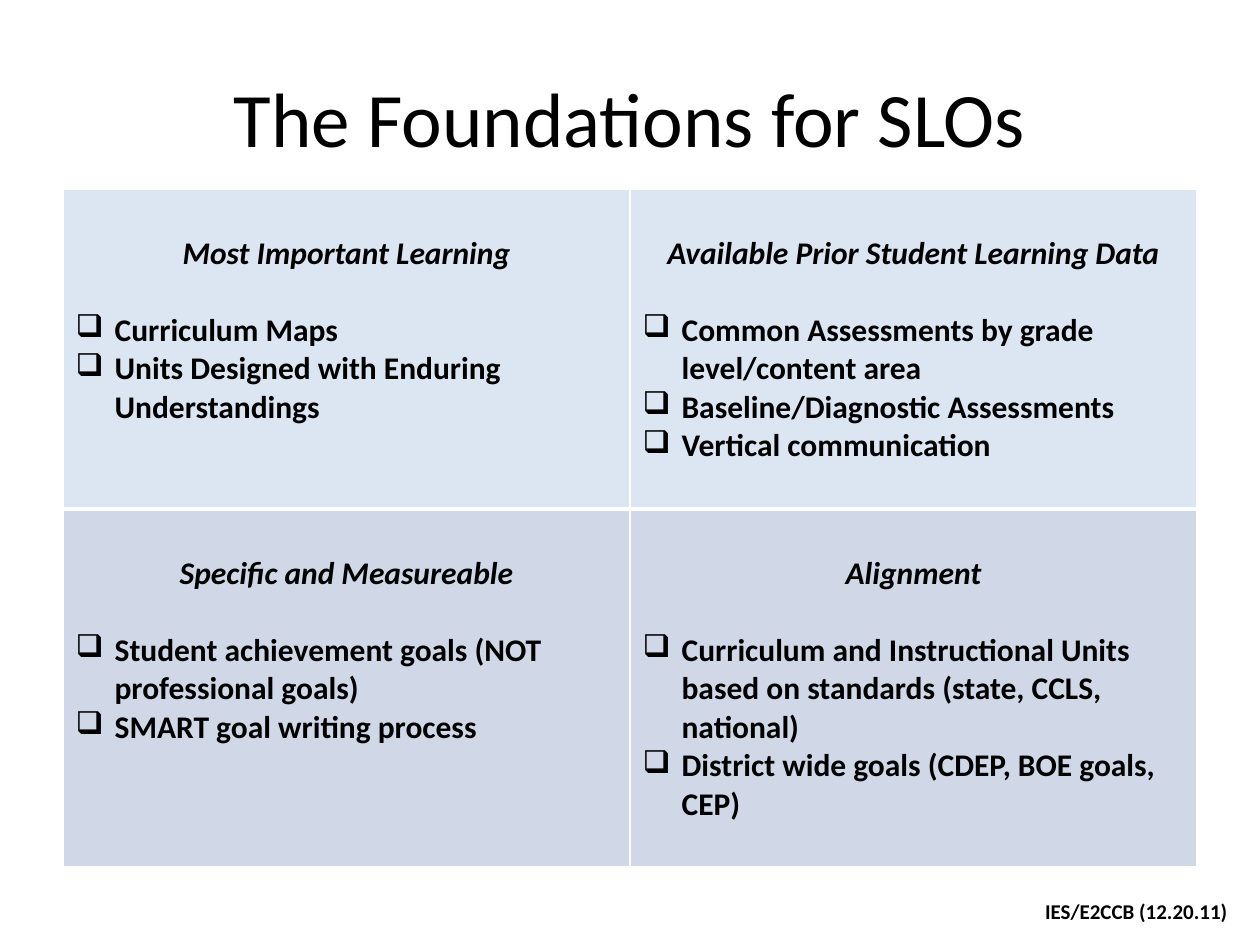
"""Build the slide on the foundations for SLOs."""
from dataclasses import dataclass

from lxml.etree import SubElement as Sub
from pptx import Presentation
from pptx.dml.color import RGBColor
from pptx.enum.text import MSO_ANCHOR as Anchor, PP_ALIGN as Align
from pptx.oxml.ns import qn
from pptx.util import Inches, Pt

BLACK = RGBColor(0x00, 0x00, 0x00)
WHITE = RGBColor(0xFF, 0xFF, 0xFF)
PALE = RGBColor(0xDC, 0xE6, 0xF2)
BLUE = RGBColor(0xD0, 0xD8, 0xE8)
FACE = "Calibri"
THIN, THICK = 1, 3


@dataclass
class Panel:
    head: str
    items: list[str]


@dataclass
class Band:
    high: float
    fill: RGBColor
    top: int
    base: int
    panels: list[Panel]


BANDS = [
    Band(2.54, PALE, THIN, THICK, [
        Panel("Most Important Learning", [
            "Curriculum Maps",
            "Units Designed with Enduring Understandings",
        ]),
        Panel("Available Prior Student Learning Data", [
            "Common Assessments by grade level/content area",
            "Baseline/Diagnostic Assessments",
            "Vertical communication",
        ]),
    ]),
    Band(2.84, BLUE, THICK, THIN, [
        Panel("Specific and Measureable", [
            "Student achievement goals (NOT professional goals)",
            "SMART goal writing process",
        ]),
        Panel("Alignment", [
            "Curriculum and Instructional Units based on standards "
            "(state, CCLS, national)",
            "District wide goals (CDEP, BOE goals, CEP)",
        ]),
    ]),
]


def style(para, size: int, align: Align, bold: bool = True,
          slant: bool = False) -> None:
    """Set the alignment and font of a paragraph."""
    para.alignment = align
    font = para.font
    font.name, font.size = FACE, Pt(size)
    font.bold, font.italic = bold, slant
    font.color.rgb = BLACK


def bullet(para) -> None:
    """Give a paragraph a box bullet and a hanging indent."""
    props = para._p.get_or_add_pPr()
    props.set("marL", str(Inches(0.31)))
    props.set("indent", str(-Inches(0.31)))
    Sub(props, qn("a:buChar"), char="❑")


def border(cell, top: int, base: int) -> None:
    """Draw white borders around a cell."""
    props = cell._tc.get_or_add_tcPr()
    for side, width in zip("LRTB", (THIN, THIN, top, base)):
        line = Sub(props, qn(f"a:ln{side}"), w=str(Pt(width)))
        Sub(Sub(line, qn("a:solidFill")), qn("a:srgbClr"), val=str(WHITE))


def draw(cell, panel: Panel, band: Band) -> None:
    """Fill one cell with its heading and list."""
    border(cell, band.top, band.base)
    cell.fill.solid()
    cell.fill.fore_color.rgb = band.fill
    cell.margin_top = Inches(0.36)
    frame = cell.text_frame
    head = frame.paragraphs[0]
    head.text = panel.head
    head.space_after = Pt(22)
    style(head, 18, Align.CENTER, slant=True)
    for item in panel.items:
        para = frame.add_paragraph()
        para.text = item
        bullet(para)
        style(para, 18, Align.LEFT)


def main() -> None:
    """Build and save the slide."""
    deck = Presentation()
    deck.slide_width, deck.slide_height = Inches(10), Inches(7.5)
    slide = deck.slides.add_slide(deck.slide_layouts[5])

    title = slide.shapes.title
    title.left, title.top = Inches(0.5), Inches(0.3)
    title.width, title.height = Inches(9), Inches(1.25)
    title.text_frame.text = "The Foundations for SLOs"
    title.text_frame.vertical_anchor = Anchor.MIDDLE
    style(title.text_frame.paragraphs[0], 44, Align.CENTER, bold=False)

    high = sum(band.high for band in BANDS)
    table = slide.shapes.add_table(
        len(BANDS), 2, Inches(0.5), Inches(1.5), Inches(9), Inches(high)
    ).table
    table.first_row = table.horz_banding = False
    for row, band in zip(table.rows, BANDS):
        row.height = Inches(band.high)
        for cell, panel in zip(row.cells, band.panels):
            draw(cell, panel, band)

    note = slide.shapes.add_textbox(
        Inches(7.17), Inches(7.08), Inches(2.67), Inches(0.3)
    ).text_frame
    note.word_wrap = True
    note.text = "IES/E2CCB (12.20.11)"
    style(note.paragraphs[0], 12, Align.RIGHT)

    deck.save("out.pptx")


if __name__ == "__main__":
    main()
